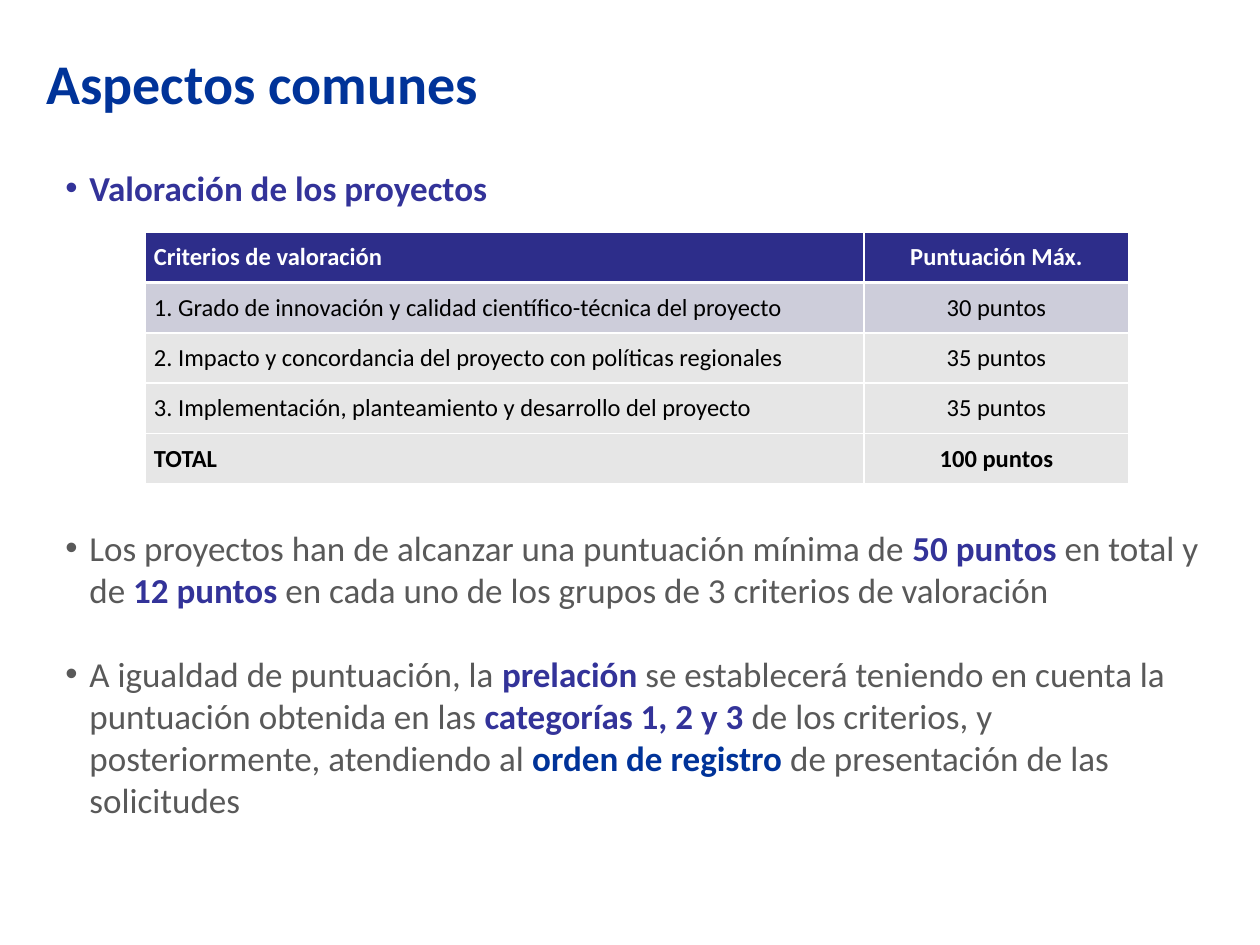
from lxml import etree
from pptx import Presentation, util as u
from pptx.dml.color import RGBColor
from pptx.enum import text
from pptx.oxml.ns import qn

PX = 914400 / 126
NAVY, INDIGO, GREY, BLACK, WHITE = "003399", "333399", "595959", "000000", "FFFFFF"


def px(length):
    return u.Emu(round(length * PX))


def add_span(para, words, size, colour, bold):
    span = para.add_run()
    span.text = words
    looks = {"name": "Calibri", "size": u.Pt(size), "bold": bold, "italic": False}
    for name, value in looks.items():
        setattr(span.font, name, value)
    span.font.color.rgb = RGBColor.from_string(colour)


deck = Presentation()
deck.slide_width, deck.slide_height = px(1260), px(945)
page = deck.slides.add_slide(deck.slide_layouts[6])

# Title and body boxes
frames = []
for left, top, width, height, inset in [(34, 38, 1186, 72, 10), (53, 160, 1167, 662, 6)]:
    box = page.shapes.add_textbox(px(left), px(top), px(width), px(height))
    layout = {"word_wrap": True, "vertical_anchor": text.MSO_ANCHOR.TOP, "margin_top": px(inset)}
    for name, value in layout.items():
        setattr(box.text_frame, name, value)
    frames.append(box.text_frame)
title, body = frames
add_span(title.paragraphs[0], "Aspectos comunes", 32, NAVY, True)

# Bulleted paragraphs: space before in points, then (words, colour, bold);
# the second one leaves room for the table
bullets = [
    (0, [("Valoración de los proyectos", INDIGO, True)]),
    (170, [
        ("Los proyectos han de alcanzar una puntuación mínima de ", GREY, False),
        ("50 puntos ", INDIGO, True),
        ("en total y de ", GREY, False),
        ("12 puntos ", INDIGO, True),
        ("en cada uno de los grupos de 3 criterios de valoración", GREY, False),
    ]),
    (12, [
        ("A igualdad de puntuación, la ", GREY, False),
        ("prelación", INDIGO, True),
        (" se establecerá teniendo en cuenta la puntuación obtenida en las ", GREY, False),
        ("categorías 1, 2 y 3 ", INDIGO, True),
        ("de los criterios, y posteriormente, atendiendo al ", GREY, False),
        ("orden de registro ", NAVY, True),
        ("de presentación de las solicitudes", GREY, False),
    ]),
]
for index, (before, spans) in enumerate(bullets):
    para = body.paragraphs[0] if index == 0 else body.add_paragraph()
    props = para._p.get_or_add_pPr()
    props.set("marL", str(px(24)))
    props.set("indent", str(-px(24)))
    etree.SubElement(props, qn("a:buFont"), typeface="Arial")
    etree.SubElement(props, qn("a:buChar"), char="•")
    para.space_before, para.space_after = u.Pt(before), u.Pt(12)
    for words, colour, bold in spans:
        add_span(para, words, 20, colour, bold)

# Criteria table: texts, fill, font colour, bold
rows = [
    ("Criterios de valoración", "Puntuación Máx.", "2D2D8A", WHITE, True),
    ("1. Grado de innovación y calidad científico-técnica del proyecto", "30 puntos", "CDCDDA", BLACK, False),
    ("2. Impacto y concordancia del proyecto con políticas regionales", "35 puntos", "E6E6E6", BLACK, False),
    ("3. Implementación, planteamiento y desarrollo del proyecto", "35 puntos", "E6E6E6", BLACK, False),
    ("TOTAL", "100 puntos", "E6E6E6", BLACK, True),
]
rules = [0, 2.25, 1.5, 1, 1, 0]  # horizontal line widths, top to bottom
table = page.shapes.add_table(len(rows), 2, px(145), px(232), px(984), px(252)).table
for column, width in zip(table.columns, (719, 265)):
    column.width = px(width)

for r, (criterion, points, fill, colour, bold) in enumerate(rows):
    divider = 1 if r == 0 else 1.5
    for c, words in enumerate((criterion, points)):
        cell = table.cell(r, c)
        layout = {"vertical_anchor": text.MSO_ANCHOR.MIDDLE, "margin_left": px(9),
                  "margin_right": px(9), "margin_top": 0, "margin_bottom": 0}
        for name, value in layout.items():
            setattr(cell, name, value)
        cell.fill.solid()
        cell.fill.fore_color.rgb = RGBColor.from_string(fill)

        para = cell.text_frame.paragraphs[0]
        para.alignment = text.PP_ALIGN.CENTER if c else text.PP_ALIGN.LEFT
        para.space_before, para.space_after = u.Pt(0), u.Pt(2)
        add_span(para, words, 14, colour, bold)

        edges = {"L": divider * c, "R": divider * (1 - c), "T": rules[r], "B": rules[r + 1]}
        props = cell._tc.get_or_add_tcPr()
        drawn = [(side, weight) for side, weight in edges.items() if weight]
        for position, (side, weight) in enumerate(drawn):
            line = etree.Element(qn(f"a:ln{side}"), w=str(u.Pt(weight)))
            paint = etree.SubElement(line, qn("a:solidFill"))
            etree.SubElement(paint, qn("a:srgbClr"), val=WHITE)
            props.insert(position, line)

deck.save("out.pptx")
